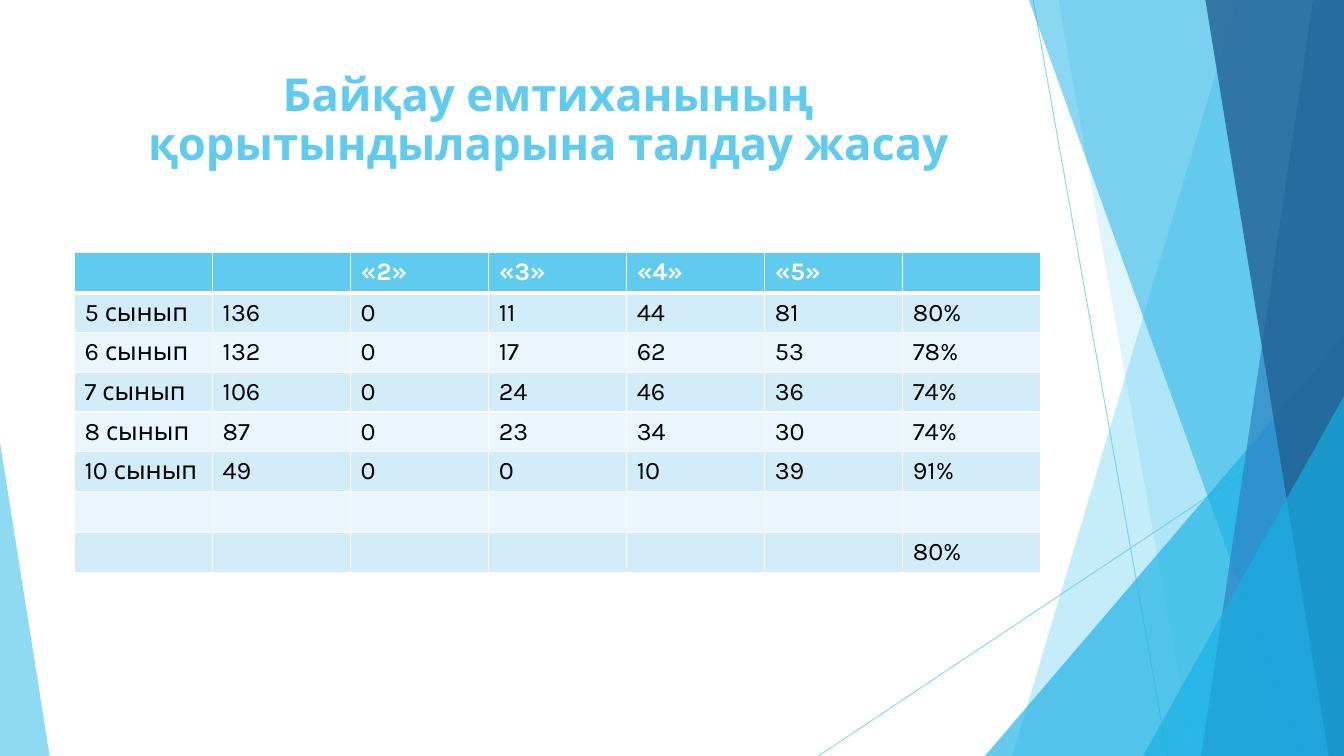
import pptx
import pptx.dml.color
import pptx.enum.shapes
import pptx.enum.text
import pptx.oxml
import pptx.oxml.ns
import pptx.oxml.xmlchemy
import pptx.util

FONT = "Karla"
WIDTH, HEIGHT = 960, 540
COLORS = {
    "sky": "5FCBEF",
    "cyan": "17B0E4",
    "blue": "2E83C3",
    "navy": "226292",
    "band_dark": "D2ECF9",
    "band_light": "EAF6FC",
    "white": "FFFFFF",
    "black": "000000",
}
RESULTS = [
    ["", "", "«2»", "«3»", "«4»", "«5»", ""],
    ["5 сынып", "136", "0", "11", "44", "81", "80%"],
    ["6 сынып", "132", "0", "17", "62", "53", "78%"],
    ["7 сынып", "106", "0", "24", "46", "36", "74%"],
    ["8 сынып", "87", "0", "23", "34", "30", "74%"],
    ["10 сынып", "49", "0", "0", "10", "39", "91%"],
    [""] * 7,
    [""] * 6 + ["80%"],
]


def rgb(name):
    return pptx.dml.color.RGBColor.from_string(COLORS[name])


def points(*values):
    return [pptx.util.Pt(value) for value in values]


def set_opacity(element, percent):
    """Make every colour inside the element partly transparent."""
    for color in element.iter(pptx.oxml.ns.qn("a:srgbClr")):
        alpha = pptx.oxml.xmlchemy.OxmlElement("a:alpha")
        alpha.set("val", str(percent * 1000))
        color.append(alpha)


def paint(shape, color, opacity):
    shape.shadow.inherit = False
    shape.fill.solid()
    shape.fill.fore_color.rgb = rgb(color)
    shape.line.fill.background()
    set_opacity(shape.element.spPr, opacity)


def add_thin_line(slide, start, end):
    line = slide.shapes.add_connector(
        pptx.enum.shapes.MSO_CONNECTOR.STRAIGHT, *points(*start, *end))
    line.line.color.rgb = rgb("sky")
    line.line.width = pptx.util.Pt(0.75)
    properties = line.element.spPr
    set_opacity(properties, 70)
    properties.append(pptx.oxml.xmlchemy.OxmlElement("a:effectLst"))


def add_side_panel(slide, top_left, bottom_left, color, opacity):
    """Fill from a slanted left edge to the right edge of the slide."""
    builder = slide.shapes.build_freeform(pptx.util.Pt(top_left), 0, scale=1.0)
    corners = [(WIDTH, 0), (WIDTH, HEIGHT), (bottom_left, HEIGHT)]
    builder.add_line_segments([points(*corner) for corner in corners])
    paint(builder.convert_to_shape(), color, opacity)


def add_corner_triangle(slide, left, top, width, apex, color, opacity):
    """Add a triangle that stands on the bottom edge of the slide."""
    triangle = slide.shapes.add_shape(
        pptx.enum.shapes.MSO_SHAPE.ISOSCELES_TRIANGLE,
        *points(left, top, width, HEIGHT - top))
    triangle.adjustments[0] = apex
    paint(triangle, color, opacity)


def add_decoration(slide):
    add_thin_line(slide, (738, 0), (834, HEIGHT))
    add_thin_line(slide, (WIDTH, 290), (584.6, HEIGHT))
    add_side_panel(slide, 884, 723, "sky", 36)
    add_side_panel(slide, 756, 852, "sky", 20)
    add_corner_triangle(slide, 703.5, 240, 256.5, 1, "cyan", 66)
    add_side_panel(slide, 735, 929.5, "cyan", 50)
    add_side_panel(slide, 938, 858, "blue", 70)
    add_side_panel(slide, 861, 949, "navy", 80)
    add_corner_triangle(slide, 816.5, 283, 143.5, 1, "cyan", 66)
    add_corner_triangle(slide, 0, 316, 35.5, 0, "sky", 70)


def add_text(paragraph, text, size, color, bold):
    run = paragraph.add_run()
    run.text = text
    run.font.name = FONT
    run.font.size = pptx.util.Pt(size)
    run.font.bold = bold
    run.font.color.rgb = rgb(color)


def set_title(slide, text):
    title = slide.shapes.title
    title.left, title.top, title.width, title.height = points(53.3, 48.2, 676.8, 103.7)
    frame = title.text_frame
    frame.word_wrap = True
    frame.auto_size = pptx.enum.text.MSO_AUTO_SIZE.NONE
    frame.vertical_anchor = pptx.enum.text.MSO_ANCHOR.TOP
    paragraph = frame.paragraphs[0]
    paragraph.alignment = pptx.enum.text.PP_ALIGN.CENTER
    paragraph.line_spacing = 0.9
    add_text(paragraph, text, 32.4, "sky", True)


def set_borders(cell, widths):
    """Draw white borders; widths go left, right, top, bottom."""
    properties = cell._tc.get_or_add_tcPr()
    for index, (side, width) in enumerate(zip("LRTB", points(*widths))):
        border = pptx.oxml.parse_xml(
            f'<a:ln{side} {pptx.oxml.ns.nsdecls("a")} w="{int(width)}"><a:solidFill>'
            f'<a:srgbClr val="{COLORS["white"]}"/></a:solidFill></a:ln{side}>')
        properties.insert(index, border)


def add_results_table(slide, rows):
    column_count = len(rows[0])
    row_height, column_width = 28.3, 98.6
    frame = slide.shapes.add_table(
        len(rows), column_count,
        *points(53.3, 180, column_width * column_count, row_height * len(rows)))
    table = frame.table
    for column in table.columns:
        column.width = pptx.util.Pt(column_width)
    for row_index, values in enumerate(rows):
        table.rows[row_index].height = pptx.util.Pt(row_height)
        header = row_index == 0
        band = "sky" if header else ("band_light", "band_dark")[row_index % 2]
        for column_index, value in enumerate(values):
            cell = table.cell(row_index, column_index)
            cell.fill.solid()
            cell.fill.fore_color.rgb = rgb(band)
            set_borders(cell, (1, 1, 3 if row_index == 1 else 1, 3 if header else 1))
            if value:
                add_text(cell.text_frame.paragraphs[0], value, 18,
                         "white" if header else "black", header)


def main():
    presentation = pptx.Presentation()
    presentation.slide_width, presentation.slide_height = points(WIDTH, HEIGHT)
    slide = presentation.slides.add_slide(presentation.slide_layouts[5])
    add_decoration(slide)
    set_title(slide, "Байқау емтиханының қорытындыларына талдау жасау")
    add_results_table(slide, RESULTS)
    presentation.save("out.pptx")


if __name__ == "__main__":
    main()
